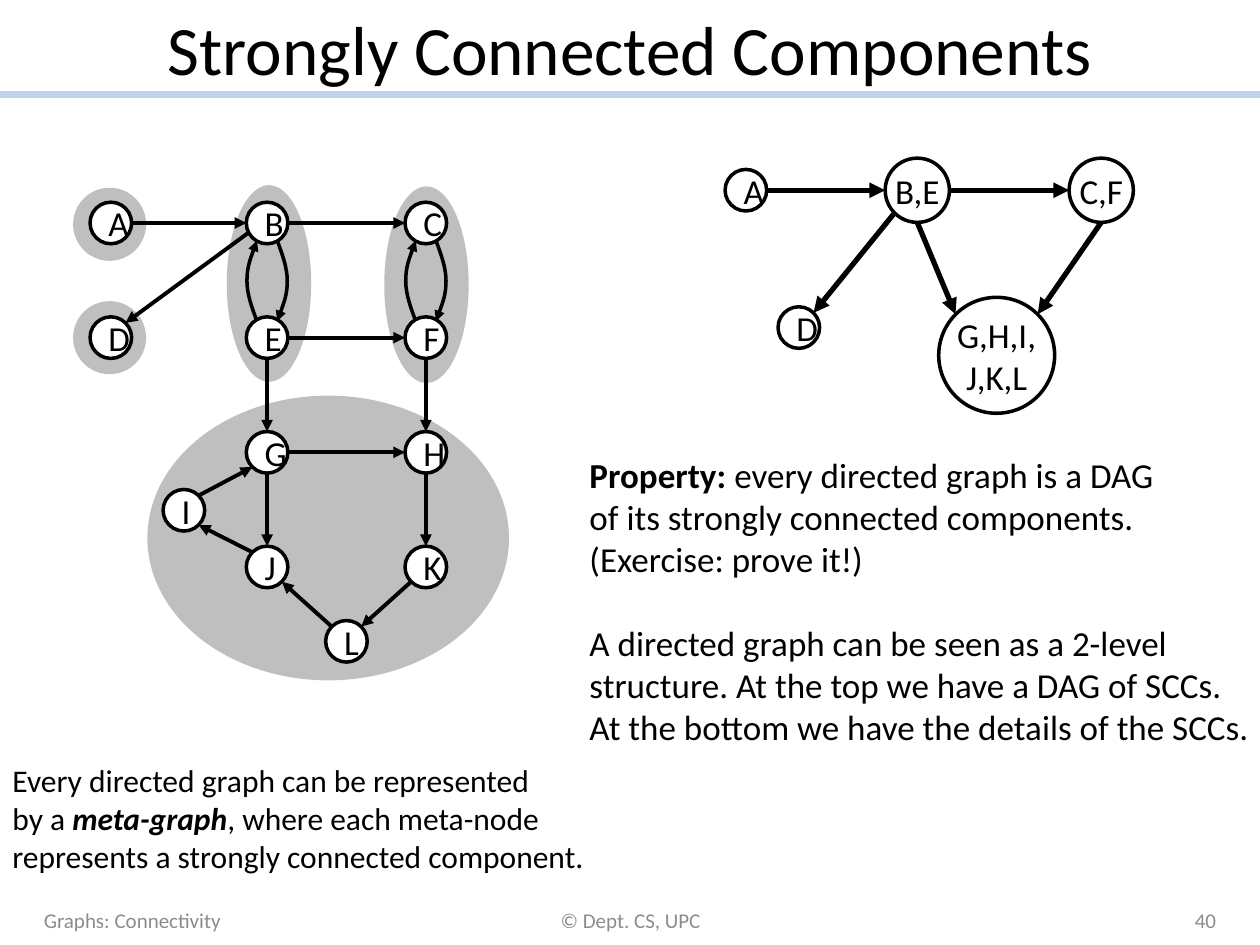
"""Build a slide on the strongly connected components of a directed graph."""
from pptx import Presentation
from pptx.dml.color import RGBColor
from pptx.enum import shapes, text
from pptx.oxml.ns import qn
from pptx.oxml.xmlchemy import OxmlElement
from pptx.util import Inches, Pt

BLACK = RGBColor(0x00, 0x00, 0x00)
WHITE = RGBColor(0xFF, 0xFF, 0xFF)
GRAY = RGBColor(0xBF, 0xBF, 0xBF)
FOOTER = RGBColor(0x8C, 0x8C, 0x8C)
RULE = RGBColor(0xC2, 0xD1, 0xED)

FONT = "Calibri"
LEFT, CENTER, RIGHT = text.PP_ALIGN.LEFT, text.PP_ALIGN.CENTER, text.PP_ALIGN.RIGHT
NODE = 0.33
SITES = {"N": (0, -1), "S": (0, 1), "W": (-1, 0), "E": (1, 0),
         "NW": (-0.71, -0.71), "NE": (0.71, -0.71),
         "SW": (-0.71, 0.71), "SE": (0.71, 0.71)}

COLS = (0.88, 2.12, 3.38)
ROWS = (1.77, 2.68, 3.59, 4.5)
GRID = ("ABC", "DEF", " GH", " JK")
GRAPH_NODES = {name: (x, y, NODE) for y, names in zip(ROWS, GRID)
               for x, name in zip(COLS, names) if name.strip()}
GRAPH_NODES.update(I=(1.46, 4.05, NODE), L=(2.75, 5.09, NODE))
GRAPH_EDGES = [("A", "E", "B", "W"), ("B", "E", "C", "W"), ("E", "E", "F", "W"),
               ("E", "S", "G", "N"), ("F", "S", "H", "N"), ("G", "E", "H", "W"),
               ("H", "S", "K", "N"), ("G", "S", "J", "N"), ("J", "NW", "I", "SE"),
               ("I", "NE", "G", "SW"), ("K", "SW", "L", "NE"), ("L", "NW", "J", "SE")]
COMPONENTS = [(1.17, 3.14, 2.87, 2.26), (3.05, 1.48, 0.67, 1.56),
              (1.8, 1.47, 0.67, 1.56), (0.58, 2.39, 0.58, 0.58),
              (0.58, 1.49, 0.58, 0.58)]

META_NODES = {"A": (5.92, 1.51, NODE), "D": (6.34, 2.6, NODE),
              "B,E": (7.28, 1.51, 0.51), "C,F": (8.74, 1.51, 0.51),
              "G,H,I,\nJ,K,L": (7.91, 2.82, 0.92)}
META_EDGES = [("A", "E", "B,E", "W"), ("B,E", "E", "C,F", "W"),
              ("C,F", "S", "G,H,I,\nJ,K,L", "NE"),
              ("B,E", "S", "G,H,I,\nJ,K,L", "NW"), ("B,E", "SW", "D", "NE")]


def set_all(obj, values):
    """Set every attribute in a dict of format values."""
    for name, value in values.items():
        setattr(obj, name, value)


def write(tf, paragraphs, size, color=BLACK, align=LEFT):
    """Fill a text frame with paragraphs of (text, font values) runs."""
    for i, runs in enumerate(paragraphs):
        p = tf.paragraphs[0] if i == 0 else tf.add_paragraph()
        p.alignment = align
        for words, style in runs:
            for j, line in enumerate(words.split("\n")):
                if j:
                    p.add_line_break()
                r = p.add_run()
                r.text = line
                set_all(r.font, {"name": FONT, "size": Pt(size), **style})
                r.font.color.rgb = color


def add_text(s, box, paragraphs, size, color=BLACK, align=LEFT, **frame):
    """Add a text box and return its text frame."""
    tf = s.shapes.add_textbox(*map(Inches, box)).text_frame
    set_all(tf, {"word_wrap": True, **frame})
    write(tf, paragraphs, size, color, align)
    return tf


def add_ellipse(group, box, fill):
    """Add a plain ellipse without an outline."""
    sp = group.shapes.add_shape(shapes.MSO_SHAPE.OVAL, *map(Inches, box))
    sp.shadow.inherit = False
    sp.fill.solid()
    sp.fill.fore_color.rgb = fill
    sp.line.fill.background()
    return sp


def add_node(group, label, x, y, d):
    """Add a labelled circle centred on a point."""
    sp = add_ellipse(group, (x - d / 2, y - d / 2, d, d), WHITE)
    sp.line.color.rgb = BLACK
    sp.line.width = Pt(2)
    tf = sp.text_frame
    tf.vertical_anchor = text.MSO_ANCHOR.MIDDLE
    if d > NODE:
        set_all(tf, {"margin_left": 0, "margin_right": 0})
    write(tf, [[(label, {})]], 20, align=CENTER)


def add_arrowhead(sp):
    """Put a triangle at the end of a line."""
    tail = OxmlElement("a:tailEnd")
    tail.set("type", "triangle")
    sp.line._get_or_add_ln().append(tail)


def add_line(parent, start, end, color, width):
    """Add a straight line without a shadow."""
    cx = parent.shapes.add_connector(shapes.MSO_CONNECTOR.STRAIGHT,
                                     *map(Inches, (*start, *end)))
    cx.line.color.rgb = color
    cx.line.width = Pt(width)
    cx._element.spPr.append(OxmlElement("a:effectLst"))
    return cx


def site(node, side):
    """Return the point on the rim of a node at a compass side."""
    x, y, d = node
    dx, dy = SITES[side]
    return x + dx * d / 2, y + dy * d / 2


def add_edge(group, nodes, edge, width):
    """Add an arrow between the rims of two nodes."""
    a, a_side, b, b_side = edge
    add_arrowhead(add_line(group, site(nodes[a], a_side), site(nodes[b], b_side),
                           BLACK, width))


def add_curve(group, x, y1, y2, side):
    """Add a curved arrow that bulges to one side of a column."""
    offsets = (0.08, 0.12, 0.16, 0.16, 0.16, 0.12, 0.08)
    points = [(Inches(x + side * dx), Inches(y1 + (y2 - y1) * i / 6))
              for i, dx in enumerate(offsets)]
    builder = group.shapes.build_freeform(*points[0])
    builder.add_line_segments(points[1:], close=False)
    sp = builder.convert_to_shape()
    sp.shadow.inherit = False
    sp.fill.background()
    sp.line.color.rgb = BLACK
    sp.line.width = Pt(2)
    add_arrowhead(sp)
    lines = list(sp._element.iter(qn("a:lnTo")))
    for i in range(0, len(lines), 3):
        bezier = OxmlElement("a:cubicBezTo")
        lines[i].addprevious(bezier)
        for line in lines[i:i + 3]:
            bezier.append(line[0])
            line.getparent().remove(line)


def add_graph(s):
    """Draw the directed graph over its shaded components."""
    group = s.shapes.add_group_shape()
    for box in COMPONENTS:
        add_ellipse(group, box, GRAY)
    add_edge(group, GRAPH_NODES, ("B", "NE", "D", "NE"), 2.25)
    for label, node in GRAPH_NODES.items():
        add_node(group, label, *node)
    for edge in GRAPH_EDGES:
        add_edge(group, GRAPH_NODES, edge, 2.25)
    for x in COLS[1:]:
        add_curve(group, x, 1.91, 2.55, 1)
        add_curve(group, x, 2.55, 1.91, -1)


def add_meta_graph(s):
    """Draw the graph of components."""
    group = s.shapes.add_group_shape()
    for label, node in META_NODES.items():
        add_node(group, label, *node)
    for edge in META_EDGES:
        add_edge(group, META_NODES, edge, 3)


def main():
    """Build and save the slide."""
    prs = Presentation()
    set_all(prs, {"slide_width": Inches(10), "slide_height": Inches(7.5)})
    s = prs.slides.add_slide(prs.slide_layouts[6])
    middle = {"vertical_anchor": text.MSO_ANCHOR.MIDDLE}
    grow = {"word_wrap": False, "auto_size": text.MSO_AUTO_SIZE.SHAPE_TO_FIT_TEXT}
    add_line(s, (0, 0.75), (10, 0.75), RULE, 4)
    add_text(s, (0.5, 0, 9, 0.75), [[("Strongly Connected Components", {})]],
             39.6, align=CENTER, **middle)
    for x, w, words, align in ((0.25, 2.33, "Graphs: Connectivity", LEFT),
                               (3.42, 3.17, "© Dept. CS, UPC", CENTER),
                               (7.42, 2.33, "40", RIGHT)):
        add_text(s, (x, 7.1, w, 0.4), [[(words, {})]], 12, FOOTER, align, **middle)
    add_graph(s)
    add_meta_graph(s)
    add_text(s, (0, 5.99, 4.79, 1.01), [[
        ("Every directed graph can be represented\nby a ", {}),
        ("meta-graph", {"bold": True, "italic": True}),
        (", where each meta-node\nrepresents a strongly connected component.", {})]],
        18, **grow)
    tf = add_text(s, (4.58, 3.55, 5.49, 2.46), [
        [("Property: ", {"bold": True}),
         ("every directed graph is a DAG\nof its strongly connected components.", {})],
        [("(Exercise: prove it!)", {})],
        [("A directed graph can be seen as a 2-level\nstructure. At the top we have a DAG "
          "of SCCs.\nAt the bottom we have the details of the SCCs.", {})]], 20, **grow)
    tf.paragraphs[2].space_before = Pt(24)
    prs.save("out.pptx")


if __name__ == "__main__":
    main()
